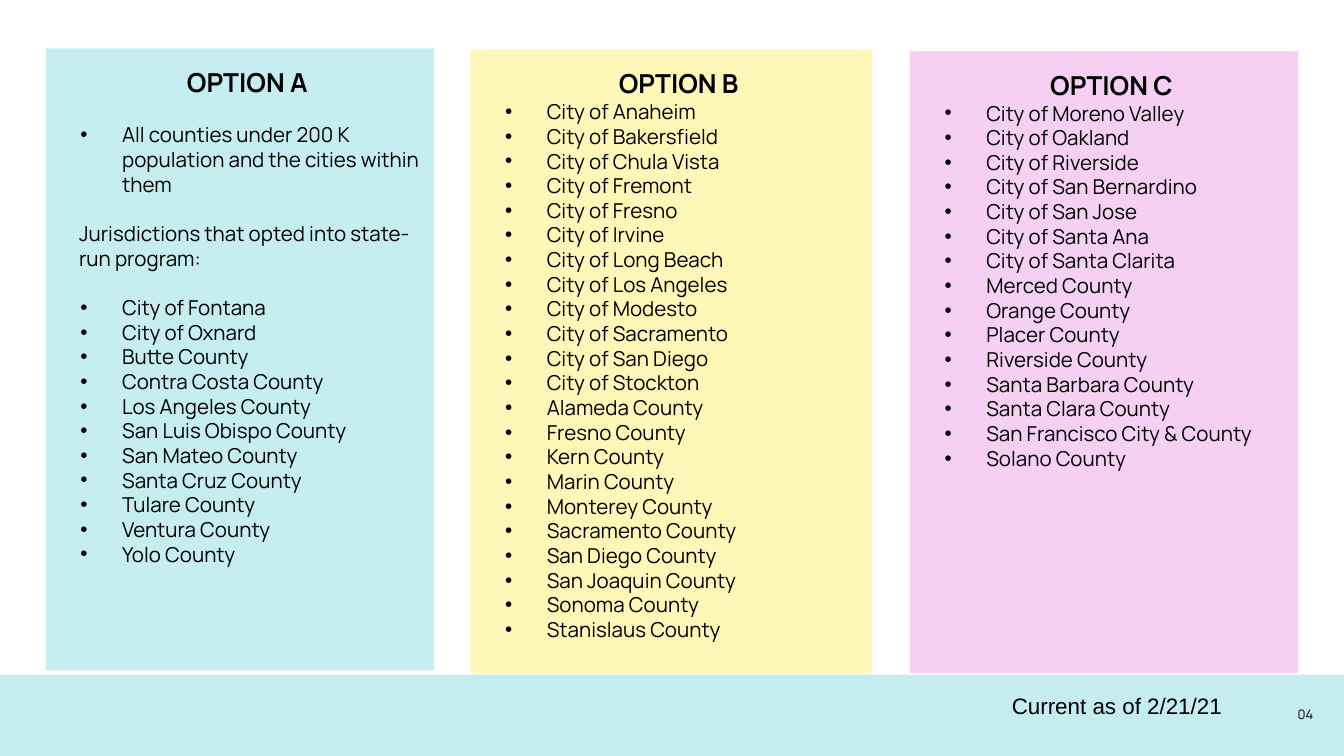
from dataclasses import dataclass

import lxml.etree
import pptx
import pptx.dml.color
import pptx.enum.shapes
import pptx.enum.text
import pptx.oxml.ns
import pptx.util
from pptx.util import Inches

COLOURS = {
    "text": "000000",
    "bar": "C5ECEF",
    "blue": "C6EDEF",
    "yellow": "FFF391",
    "pink": "F0B7EE",
}
FONT = "Manrope"
BULLET_FONT = "Arial"
BLANK_LINE = 13.2
SLIDE_WIDTH = 10
SLIDE_HEIGHT = SLIDE_WIDTH * 9 / 16
ALIGN = pptx.enum.text.PP_ALIGN
ANCHOR = pptx.enum.text.MSO_ANCHOR


@dataclass
class Line:
    text: str
    bullet: bool = True
    space_before: float = 0


@dataclass
class Panel:
    title: str
    left: float
    top: float
    width: float
    height: float
    colour: str
    opacity: int
    lines: list[Line]


def places(pattern: str, names: str) -> list[Line]:
    """Turn a comma-separated list of names into bulleted lines."""
    return [Line(pattern.format(name)) for name in names.split(", ")]


def cities(names: str) -> list[Line]:
    return places("City of {}", names)


def counties(names: str) -> list[Line]:
    return places("{} County", names)


opted_in = cities("Fontana, Oxnard") + counties(
    "Butte, Contra Costa, Los Angeles, San Luis Obispo, San Mateo, "
    "Santa Cruz, Tulare, Ventura, Yolo"
)
opted_in[0].space_before = BLANK_LINE

PANELS = [
    Panel("OPTION A ", 0.34, 0.365, 2.89, 4.63, "blue", 100, [
        Line("All counties under 200 K population and the cities within them",
             space_before=BLANK_LINE),
        Line("Jurisdictions that opted into state-run program:",
             bullet=False, space_before=BLANK_LINE),
        *opted_in,
    ]),
    Panel("OPTION B ", 3.5, 0.37, 2.99, 4.64, "yellow", 65, [
        *cities("Anaheim, Bakersfield, Chula Vista, Fremont, Fresno, Irvine, "
                "Long Beach, Los Angeles, Modesto, Sacramento, San Diego, Stockton"),
        *counties("Alameda, Fresno, Kern, Marin, Monterey, Sacramento, "
                  "San Diego, San Joaquin, Sonoma, Stanislaus"),
    ]),
    Panel("OPTION C ", 6.77, 0.38, 2.89, 4.63, "pink", 65, [
        *cities("Moreno Valley, Oakland, Riverside, San Bernardino, San Jose, "
                "Santa Ana, Santa Clarita"),
        *counties("Merced, Orange, Placer, Riverside, Santa Barbara, Santa Clara"),
        Line("San Francisco City & County"),
        Line("Solano County"),
    ]),
]
PANELS[0].top = 0.36


def add_element(parent, tag: str, **attributes: str):
    return lxml.etree.SubElement(parent, pptx.oxml.ns.qn(tag), attributes)


def add_rectangle(slide, left, top, width, height, colour: str, opacity: int = 100):
    shape = slide.shapes.add_shape(
        pptx.enum.shapes.MSO_SHAPE.RECTANGLE,
        Inches(left), Inches(top), Inches(width), Inches(height),
    )
    shape.shadow.inherit = False
    shape.fill.solid()
    shape.fill.fore_color.rgb = pptx.dml.color.RGBColor.from_string(COLOURS[colour])
    shape.line.fill.background()
    if opacity < 100:
        colour_element = shape.fill._xPr.find(".//" + pptx.oxml.ns.qn("a:srgbClr"))
        add_element(colour_element, "a:alpha", val=str(opacity * 1000))
    return shape


def set_frame(frame, inset_y: float = 0.1, anchor=ANCHOR.TOP) -> None:
    frame.word_wrap = True
    frame.vertical_anchor = anchor
    frame.margin_left = frame.margin_right = Inches(0.1)
    frame.margin_top = frame.margin_bottom = Inches(inset_y)


def write(paragraph, text: str, *, size: float, font: str = FONT, bold: bool = False,
          align=ALIGN.LEFT, margin: float = 0, indent: float = 0, bullet: bool = False,
          space_before: float = 0, line_spacing: float = 1.0) -> None:
    paragraph.alignment = align
    paragraph.line_spacing = line_spacing
    paragraph.space_before = pptx.util.Pt(space_before)
    paragraph.space_after = pptx.util.Pt(0)
    properties = paragraph._p.get_or_add_pPr()
    properties.set("marL", str(Inches(margin)))
    properties.set("indent", str(Inches(indent)))
    if bullet:
        bullet_colour = add_element(properties, "a:buClr")
        add_element(bullet_colour, "a:srgbClr", val=COLOURS["text"])
        add_element(properties, "a:buFont", typeface=BULLET_FONT)
        add_element(properties, "a:buChar", char="•")
    else:
        add_element(properties, "a:buNone")
    run = paragraph.add_run()
    run.text = text
    run.font.name = font
    run.font.size = pptx.util.Pt(size)
    run.font.bold = bold
    run.font.color.rgb = pptx.dml.color.RGBColor.from_string(COLOURS["text"])


def add_panel(slide, panel: Panel) -> None:
    shape = add_rectangle(slide, panel.left, panel.top, panel.width, panel.height,
                          panel.colour, panel.opacity)
    frame = shape.text_frame
    set_frame(frame)
    write(frame.paragraphs[0], panel.title, size=14, bold=True,
          align=ALIGN.CENTER, margin=0.15, line_spacing=1.15)
    for line in panel.lines:
        margin, indent = (0.47, -0.31) if line.bullet else (0.15, 0)
        write(frame.add_paragraph(), line.text, size=11, margin=margin, indent=indent,
              bullet=line.bullet, space_before=line.space_before)


def add_text_box(slide, left, top, width, height):
    box = slide.shapes.add_textbox(Inches(left), Inches(top), Inches(width), Inches(height))
    return box.text_frame


def main() -> None:
    presentation = pptx.Presentation()
    presentation.slide_width = Inches(SLIDE_WIDTH)
    presentation.slide_height = Inches(SLIDE_HEIGHT)
    slide = presentation.slides.add_slide(presentation.slide_layouts[6])

    add_rectangle(slide, -0.04, 5.02, 10.08, 0.63, "bar")

    page_number = add_text_box(slide, 9.27, 5.1, 0.6, 0.43)
    set_frame(page_number, anchor=ANCHOR.MIDDLE)
    write(page_number.paragraphs[0], "04", size=7, align=ALIGN.RIGHT)

    for panel in PANELS:
        add_panel(slide, panel)

    date_note = add_text_box(slide, 7.43, 5.1, 1.84, 0.3)
    set_frame(date_note, inset_y=0.05)
    write(date_note.paragraphs[0], "Current as of 2/21/21", size=12, font="Arial")

    presentation.save("out.pptx")


if __name__ == "__main__":
    main()
